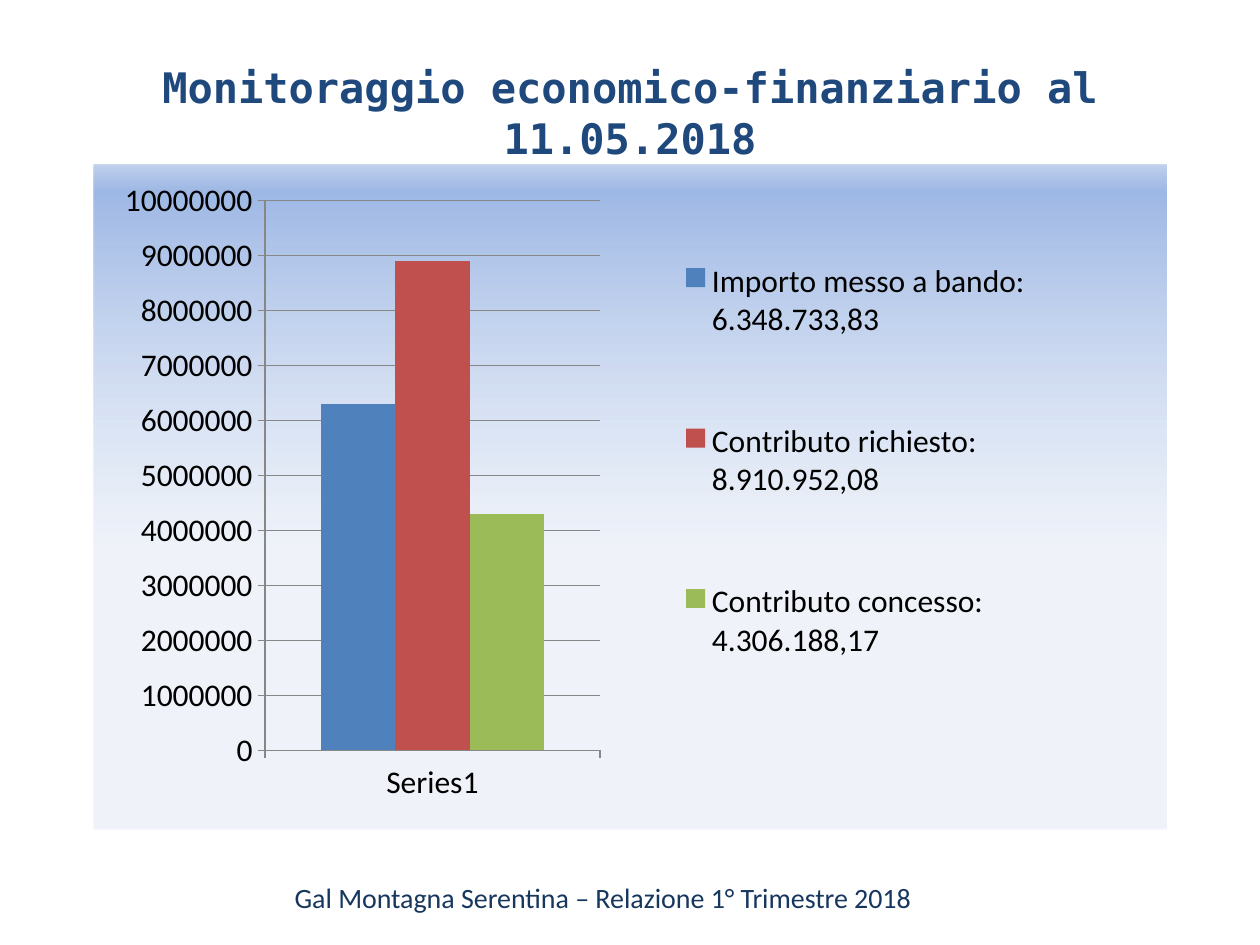
import lxml.etree
import pptx
import pptx.chart.data
import pptx.dml.color
import pptx.enum.chart
import pptx.enum.text
import pptx.oxml
import pptx.oxml.ns
import pptx.util

THEME = {
    "title": ("DejaVu Sans Mono", 24, "1F497D", True),
    "footer": ("Calibri", 16, "17375E", False),
    "chart": ("Calibri", 18, "000000", False),
    "axis": "878787",
    "backdrop": [(0, "9AB5E4", 100), (0, "C2D1ED", 100), (4, "9EB8E5", 100), (58, "E1E8F5", 50)],
}
AMOUNTS = [
    ("Importo messo a bando: 6.348.733,83", 6_300_000, "4F81BD"),
    ("Contributo richiesto: 8.910.952,08", 8_900_000, "C0504D"),
    ("Contributo concesso: 4.306.188,17", 4_300_000, "9BBB59"),
]
qn = pptx.oxml.ns.qn
rgb = pptx.dml.color.RGBColor.from_string

deck = pptx.Presentation()
deck.slide_width = pptx.util.Inches(10)
deck.slide_height = pptx.util.Inches(7.5)
slide = deck.slides.add_slide(deck.slide_layouts[6])


def share(left, top, width, height):
    return [int(part * whole) for part, whole in zip(
        (left, top, width, height), (deck.slide_width, deck.slide_height) * 2)]


def style(font, role):
    font.name, size, colour, font.bold = THEME[role]
    font.size = pptx.util.Pt(size)
    font.color.rgb = rgb(colour)


amounts_data = pptx.chart.data.CategoryChartData()
amounts_data.categories = ["Series1"]
for label, amount, _ in AMOUNTS:
    amounts_data.add_series(label, [amount])
amounts = slide.shapes.add_chart(
    pptx.enum.chart.XL_CHART_TYPE.COLUMN_CLUSTERED,
    *share(0.074, 0.174, 0.852, 0.704), amounts_data).chart
amounts.has_title = False
style(amounts.font, "chart")
columns = amounts.plots[0]
columns.vary_by_categories = False
columns.gap_width = 150
columns.overlap = 0
for column, (_, _, colour) in zip(columns.series, AMOUNTS):
    column.format.fill.solid()
    column.format.fill.fore_color.rgb = rgb(colour)

scale = amounts.value_axis
scale.minimum_scale, scale.maximum_scale, scale.major_unit = 0, 10_000_000, 1_000_000
scale.has_major_gridlines = True
scale.tick_labels.number_format = "General"
scale.tick_labels.number_format_is_linked = False
for rule in (scale, amounts.category_axis, scale.major_gridlines):
    rule.format.line.color.rgb = rgb(THEME["axis"])
    rule.format.line.width = pptx.util.Pt(0.8)
for axis in (scale, amounts.category_axis):
    axis.major_tick_mark = pptx.enum.chart.XL_TICK_MARK.OUTSIDE

amounts.has_legend = True
amounts.legend.position = pptx.enum.chart.XL_LEGEND_POSITION.RIGHT
amounts.legend.include_in_layout = False
style(amounts.legend.font, "chart")

chart_root = amounts.element
plot_area = chart_root.find(".//" + qn("c:plotArea"))
legend_position = chart_root.find(".//" + qn("c:legendPos"))
for old_layout in plot_area.findall(qn("c:layout")) + legend_position.getparent().findall(qn("c:layout")):
    old_layout.getparent().remove(old_layout)
for region, target, frame in (
    ("plot", "inner", (0.16, 0.054, 0.312, 0.827)),
    ("legend", None, (0.50, 0.02, 0.42, 0.85)),
):
    layout = pptx.oxml.parse_xml(f"<c:layout {pptx.oxml.ns.nsdecls('c')}/>")
    manual = lxml.etree.SubElement(layout, qn("c:manualLayout"))
    settings = [("layoutTarget", target)] if target else []
    settings += [("xMode", "edge"), ("yMode", "edge"), *zip("xywh", frame)]
    for tag, value in settings:
        lxml.etree.SubElement(manual, qn("c:" + tag)).set("val", str(value))
    if region == "plot":
        plot_area.insert(0, layout)
    else:
        legend_position.addnext(layout)

stops = "".join(
    f'<a:gs pos="{place * 1000}"><a:srgbClr val="{colour}"><a:alpha val="{opacity * 1000}"/></a:srgbClr></a:gs>'
    for place, colour, opacity in THEME["backdrop"])
chart_root.find(qn("c:chart")).addnext(pptx.oxml.parse_xml(
    f"<c:spPr {pptx.oxml.ns.nsdecls('c', 'a')}><a:gradFill><a:gsLst>{stops}</a:gsLst>"
    '<a:lin ang="5400000" scaled="0"/></a:gradFill><a:ln><a:noFill/></a:ln></c:spPr>'))

for role, words, area, wraps, alignment in (
    ("title", "Monitoraggio economico-finanziario al 11.05.2018",
     (0.114, 0.059, 0.772, 0.067), True, pptx.enum.text.PP_ALIGN.CENTER),
    ("footer", "Gal Montagna Serentina – Relazione 1° Trimestre 2018",
     (0.224, 0.925, 0.514, 0.049), False, pptx.enum.text.PP_ALIGN.LEFT),
):
    caption = slide.shapes.add_textbox(*share(*area)).text_frame
    caption.word_wrap = wraps
    caption.auto_size = pptx.enum.text.MSO_AUTO_SIZE.SHAPE_TO_FIT_TEXT
    caption.paragraphs[0].alignment = alignment
    wording = caption.paragraphs[0].add_run()
    wording.text = words
    style(wording.font, role)

deck.save("out.pptx")
